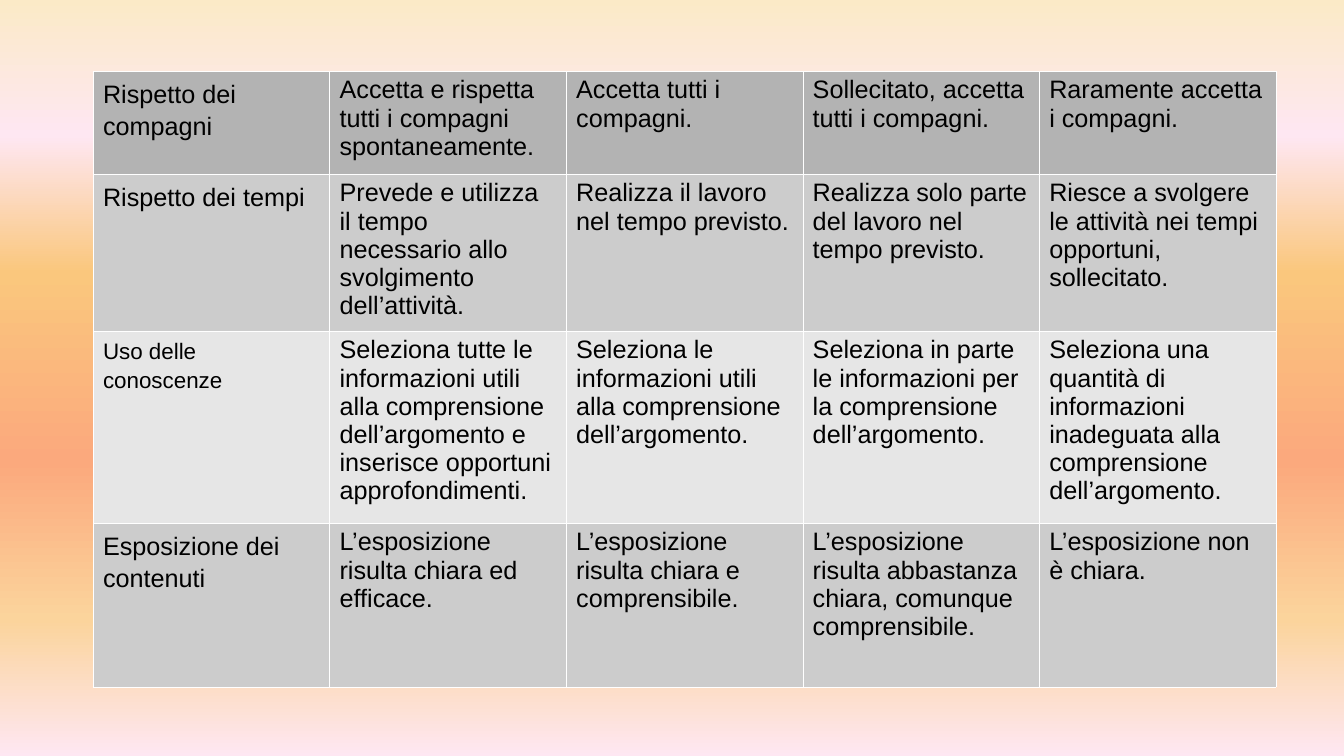
"""Builds a slide with an assessment rubric table on a gradient background."""
import pptx
import pptx.dml.color
import pptx.oxml.ns
import pptx.util
from lxml import etree

PX = 914400 / 100.8
BLACK = pptx.dml.color.RGBColor(0x00, 0x00, 0x00)
WHITE = pptx.dml.color.RGBColor(0xFF, 0xFF, 0xFF)
DARK_GREY = pptx.dml.color.RGBColor(0xB3, 0xB3, 0xB3)
MID_GREY = pptx.dml.color.RGBColor(0xCC, 0xCC, 0xCC)
LIGHT_GREY = pptx.dml.color.RGBColor(0xE6, 0xE6, 0xE6)
CREAM = pptx.dml.color.RGBColor(0xFB, 0xEA, 0xC7)
PINK = pptx.dml.color.RGBColor(0xFE, 0xE7, 0xF2)
AMBER = pptx.dml.color.RGBColor(0xFA, 0xC7, 0x7D)
CORAL = pptx.dml.color.RGBColor(0xFB, 0xA9, 0x7D)
SAND = pptx.dml.color.RGBColor(0xFB, 0xD4, 0x9C)

BACKGROUND_STOPS = [(0, CREAM), (18, PINK), (36, AMBER), (61, CORAL), (82, SAND), (100, PINK)]

RUBRIC = [
    (103, DARK_GREY, 18, [
        "Rispetto dei compagni",
        "Accetta e rispetta tutti i compagni spontaneamente.",
        "Accetta tutti i compagni.",
        "Sollecitato, accetta tutti i compagni.",
        "Raramente accetta i compagni."]),
    (157, MID_GREY, 18, [
        "Rispetto dei tempi",
        "Prevede e utilizza il tempo necessario allo svolgimento dell’attività.",
        "Realizza il lavoro nel tempo previsto.",
        "Realizza solo parte del lavoro nel tempo previsto.",
        "Riesce a svolgere le attività nei tempi opportuni, sollecitato."]),
    (192, LIGHT_GREY, 16, [
        "Uso delle conoscenze",
        "Seleziona tutte le informazioni utili alla comprensione dell’argomento "
        "e inserisce opportuni approfondimenti.",
        "Seleziona le informazioni utili alla comprensione dell’argomento.",
        "Seleziona in parte le informazioni per la comprensione dell’argomento.",
        "Seleziona una quantità di informazioni inadeguata alla comprensione dell’argomento."]),
    (164, MID_GREY, 18, [
        "Esposizione dei contenuti",
        "L’esposizione risulta chiara ed efficace.",
        "L’esposizione risulta chiara e comprensibile.",
        "L’esposizione risulta abbastanza chiara, comunque comprensibile.",
        "L’esposizione non è chiara."]),
]


def px(length):
    return round(length * PX)


def add_color_element(parent, tag, color, **attributes):
    element = etree.SubElement(parent, pptx.oxml.ns.qn(tag), **attributes)
    holder = element
    if tag != "a:gs":
        holder = etree.SubElement(element, pptx.oxml.ns.qn("a:solidFill"))
    etree.SubElement(holder, pptx.oxml.ns.qn("a:srgbClr"), val=str(color))


presentation = pptx.Presentation()
presentation.slide_width = px(1344)
presentation.slide_height = px(756)
slide = presentation.slides.add_slide(presentation.slide_layouts[6])

background = slide.background.fill
background.gradient()
background.gradient_angle = 270
stop_list = slide.element.xpath(".//a:gsLst")[0]
for stop in list(stop_list):
    stop_list.remove(stop)
for percent, color in BACKGROUND_STOPS:
    add_color_element(stop_list, "a:gs", color, pos=str(percent * 1000))

table_height = sum(row[0] for row in RUBRIC)
table = slide.shapes.add_table(
    len(RUBRIC), 5, px(93), px(71), px(1183), px(table_height)).table
table.first_row = False
table.horz_banding = False

border_width = str(pptx.util.Pt(0.06))
for row_index, (height, fill_color, heading_size, texts) in enumerate(RUBRIC):
    table.rows[row_index].height = px(height)
    for column_index, text in enumerate(texts):
        cell = table.cell(row_index, column_index)
        cell.text = text
        paragraph = cell.text_frame.paragraphs[0]
        paragraph.font.name = "Arial"
        paragraph.font.size = pptx.util.Pt(18)
        paragraph.font.color.rgb = BLACK
        if column_index == 0:
            paragraph.font.size = pptx.util.Pt(heading_size)
            paragraph.line_spacing = 1.15
        cell_properties = cell._tc.get_or_add_tcPr()
        for side in ("a:lnL", "a:lnR", "a:lnT", "a:lnB"):
            add_color_element(cell_properties, side, WHITE, w=border_width)
        cell.fill.solid()
        cell.fill.fore_color.rgb = fill_color

presentation.save("out.pptx")
